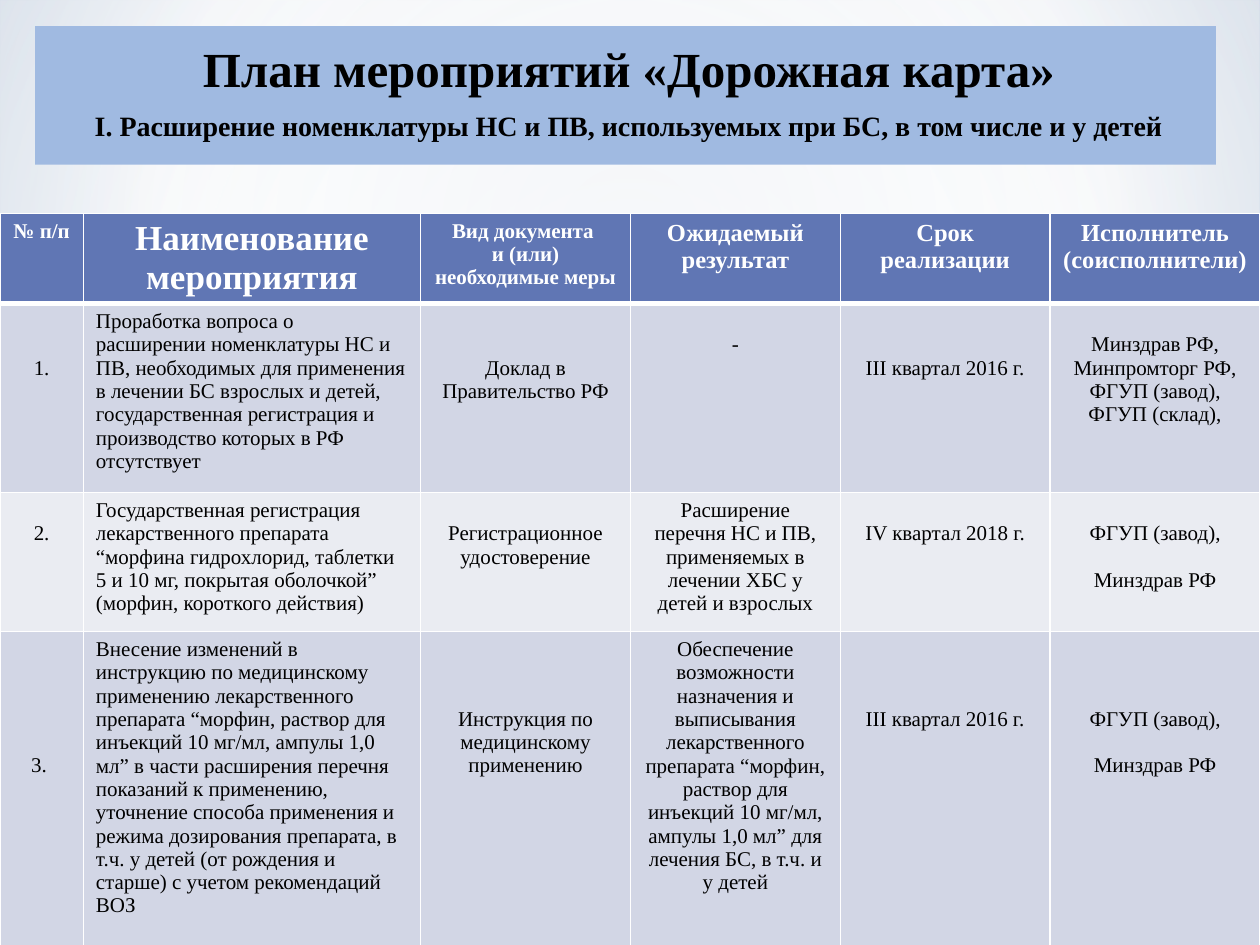
import pptx
import pptx.dml.color
import pptx.enum.shapes
import pptx.enum.text
import pptx.oxml
import pptx.oxml.ns
import pptx.util

Cm, Pt = pptx.util.Cm, pptx.util.Pt
ALIGN = pptx.enum.text.PP_ALIGN
RECTANGLE = pptx.enum.shapes.MSO_SHAPE.RECTANGLE

# Content
TITLE = [
    ("План мероприятий «Дорожная карта»", 28),
    ("I. Расширение номенклатуры НС и ПВ, используемых при БС, в том числе и у детей", 16),
]
HEADER = [  # paragraphs, size
    (["№ п/п"], 12),
    (["Наименование мероприятия"], 20),
    (["Вид документа ", "и (или) необходимые меры"], 12),
    (["Ожидаемый результат"], 14),
    (["Срок реализации"], 14),
    (["Исполнитель (соисполнители)"], 14),
]
MAKERS = ["ФГУП (завод),", "Минздрав РФ"]
ROWS = [  # paragraphs, lines the text is lowered by
    [
        (["1."], 2),
        (["Проработка вопроса о расширении номенклатуры НС и ПВ, необходимых для "
          "применения в лечении БС взрослых и детей, государственная регистрация и "
          "производство которых в РФ отсутствует"], 0),
        (["Доклад в Правительство РФ"], 2),
        (["-"], 1),
        (["III квартал 2016 г."], 2),
        (["Минздрав РФ, Минпромторг РФ, ФГУП (завод), ФГУП (склад),"], 1),
    ],
    [
        (["2."], 1),
        (["Государственная регистрация лекарственного препарата “морфина гидрохлорид, "
          "таблетки 5 и 10 мг, покрытая оболочкой” (морфин, короткого действия)"], 0),
        (["Регистрационное удостоверение"], 1),
        (["Расширение перечня НС и ПВ, применяемых в лечении ХБС у детей и взрослых"], 0),
        (["IV квартал 2018 г."], 1),
        (MAKERS, 1),
    ],
    [
        (["3. "], 5),
        (["Внесение изменений в инструкцию по медицинскому применению лекарственного "
          "препарата “морфин, раствор для инъекций 10 мг/мл, ампулы 1,0 мл” в части "
          "расширения перечня показаний к применению, уточнение способа применения и "
          "режима дозирования препарата, в т.ч. у детей (от рождения и старше) с учетом "
          "рекомендаций ВОЗ"], 0),
        (["Инструкция по медицинскому применению"], 3),
        (["Обеспечение возможности назначения и выписывания лекарственного препарата "
          "“морфин, раствор для инъекций 10 мг/мл, ампулы 1,0 мл” для лечения БС, "
          "в т.ч. и у детей"], 0),
        (["III квартал 2016 г."], 3),
        (MAKERS, 3),
    ],
]

# Layout and look
COLUMNS = [1.68, 6.8] + [4.23] * 4
HEIGHTS = [1.76, 3.81, 2.8, 6.37]
HEADER_FILL, BANDS = "6076B4", ["D2D6E5", "EAECF2"]
LINE = 13.3  # line height of 12 pt text, in points
BACKDROP = [(0, "D7DFE8", 100), (60, "FFFFFF", 100), (100, "A3B9D4", 100)]
GLOW = [(0, "FFFFFF", 89), (48, "FFFFFF", 62), (100, "E4E9EF", 79)]


def color(value):
    return pptx.dml.color.RGBColor.from_string(value)


def assign(target, values):
    for name, value in values.items():
        setattr(target, name, value)


def paint(fill, value):
    fill.solid()
    fill.fore_color.rgb = color(value)


def paint_radial(owner, stops, focus):
    """Turn the gradient fill inside the owner into a circular one."""
    owner.fill.gradient()
    element = page.element if owner is backdrop else owner.element
    old = next(element.iter(pptx.oxml.ns.qn("a:gradFill")))
    steps = "".join(
        f'<a:gs pos="{place * 1000}"><a:srgbClr val="{value}">'
        f'<a:alpha val="{opacity * 1000}"/></a:srgbClr></a:gs>'
        for place, value, opacity in stops)
    sides = " ".join(f'{side}="{part * 1000}"' for side, part in zip("ltrb", focus))
    old.getparent().replace(old, pptx.oxml.parse_xml(
        f'<a:gradFill {pptx.oxml.ns.nsdecls("a")} rotWithShape="1"><a:gsLst>{steps}</a:gsLst>'
        f'<a:path path="circle"><a:fillToRect {sides}/></a:path></a:gradFill>'))


def add_rectangle(left, top, width, height):
    box = page.shapes.add_shape(RECTANGLE, Cm(left), Cm(top), Cm(width), Cm(height))
    box.shadow.inherit = False
    box.line.fill.background()
    return box


def write(frame, lines, font, layout, gap=0):
    """Write (text, size) lines, with a gap in points between them."""
    frame.word_wrap = True
    for index, (text, size) in enumerate(lines):
        para = frame.paragraphs[0] if index == 0 else frame.add_paragraph()
        assign(para, {**layout, "space_before": Pt(gap if index else 0)})
        span = para.add_run()
        span.text = text
        assign(span.font, {"name": "Times New Roman", "size": Pt(size), "bold": font["bold"]})
        span.font.color.rgb = color(font["color"])


def fill_cell(cell, lines, fill, font, align, lowered=0, bottom=1, gap=0):
    paint(cell.fill, fill)
    assign(cell, {"margin_top": Pt(3.6 + lowered * LINE), "margin_bottom": Pt(3.6)})
    write(cell.text_frame, lines, font, {"alignment": align}, gap)
    properties = cell._tc.get_or_add_tcPr()
    for place, (side, width) in enumerate(zip("LRTB", [1, 1, 1, bottom])):
        properties.insert(place, pptx.oxml.parse_xml(
            f'<a:ln{side} {pptx.oxml.ns.nsdecls("a")} w="{width * 12700}">'
            f'<a:solidFill><a:srgbClr val="FFFFFF"/></a:solidFill></a:ln{side}>'))


deck = pptx.Presentation()
assign(deck, {"slide_width": Cm(25.4), "slide_height": Cm(19.05)})
page = deck.slides.add_slide(deck.slide_layouts[6])

# Background with a soft glow over its upper part
backdrop = page.background
paint_radial(backdrop, BACKDROP, [20, 10, 20, 60])
paint_radial(add_rectangle(0, 0, 25.4, 14.17), GLOW, [50, 50, 50, 50])

# Title panel
panel = add_rectangle(0.71, 0.53, 23.8, 2.79)
paint(panel.fill, "A0BAE1")
assign(panel.text_frame, {
    "vertical_anchor": pptx.enum.text.MSO_ANCHOR.TOP,
    "margin_left": Cm(0.38), "margin_right": Cm(0.25), "margin_top": Cm(0.25)})
write(panel.text_frame, TITLE, {"bold": True, "color": "000000"},
      {"alignment": ALIGN.CENTER, "space_after": Pt(3)}, gap=3.2)

# Table of measures
table = page.shapes.add_table(
    len(HEIGHTS), len(COLUMNS), 0, Cm(4.3), Cm(sum(COLUMNS)), Cm(sum(HEIGHTS))).table
for column, width in zip(table.columns, COLUMNS):
    column.width = Cm(width)
for row, height in zip(table.rows, HEIGHTS):
    row.height = Cm(height)
for column, (texts, size) in enumerate(HEADER):
    fill_cell(table.cell(0, column), [(text, size) for text in texts], HEADER_FILL,
              {"bold": True, "color": "FFFFFF"}, ALIGN.CENTER, bottom=3)
for number, measures in enumerate(ROWS):
    for column, (texts, lowered) in enumerate(measures):
        fill_cell(table.cell(number + 1, column), [(text, 12) for text in texts],
                  BANDS[number % 2], {"bold": False, "color": "000000"},
                  ALIGN.LEFT if column == 1 else ALIGN.CENTER, lowered, gap=LINE)

deck.save("out.pptx")
